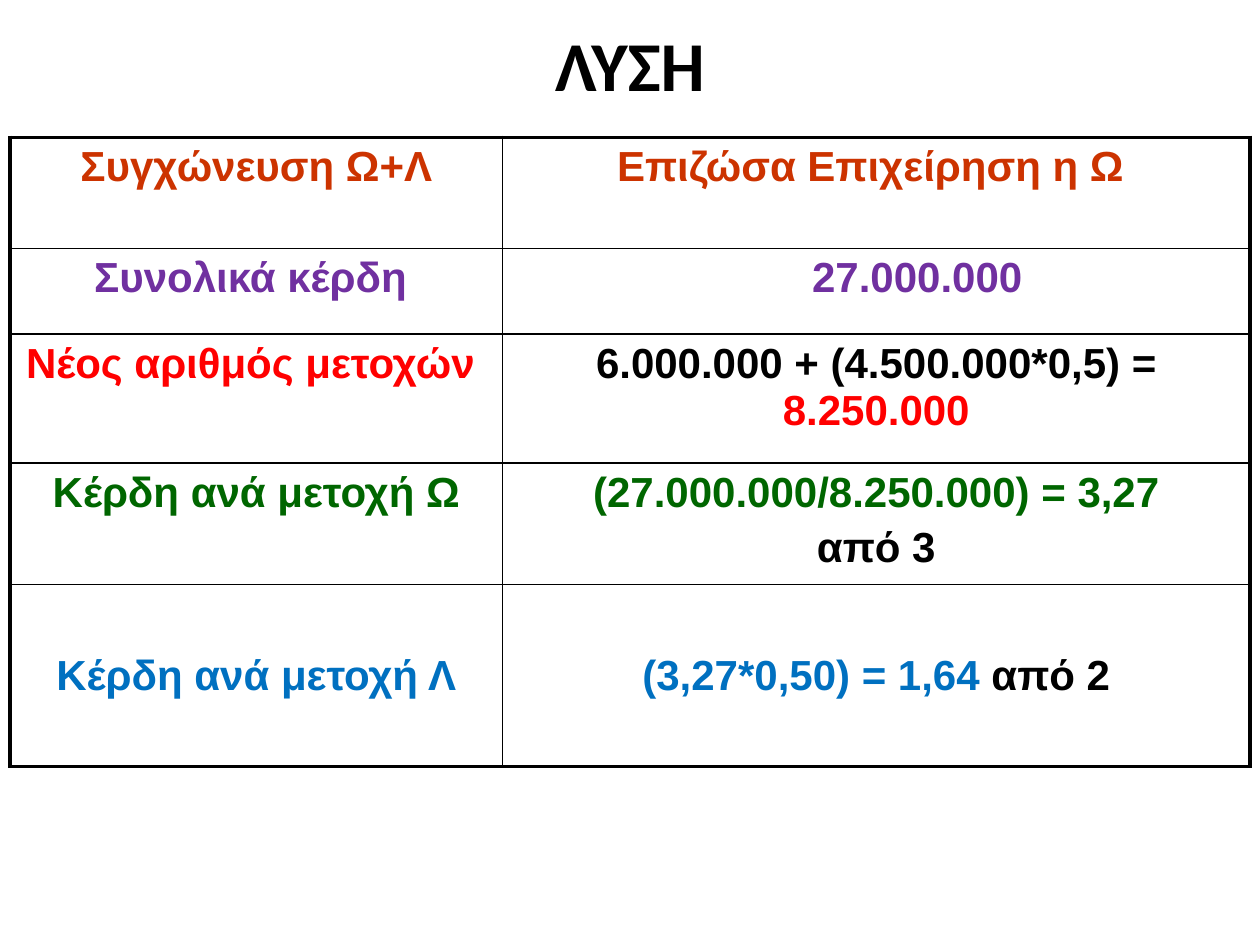
from lxml import etree
from pptx import Presentation
from pptx.dml.color import RGBColor
from pptx.enum.text import MSO_ANCHOR, PP_ALIGN
from pptx.oxml.ns import qn
from pptx.util import Pt

CENTER = PP_ALIGN.CENTER
TOP, MIDDLE = MSO_ANCHOR.TOP, MSO_ANCHOR.MIDDLE
BLACK, RED, RUST = "000000", "FF0000", "CC3300"
PURPLE, GREEN, BLUE = "7030A0", "006600", "0070C0"
THIN, THICK = 1, 2.25


def color(code):
    return RGBColor.from_string(code)


class Deck:
    """Holds the text style and the current slide."""

    def __init__(self, slide, font="Arial", size=24):
        self.slide, self.font, self.size = slide, font, size

    def text(self, para, runs, font=None, size=None):
        para.alignment = CENTER
        for words, code in runs:
            run = para.add_run()
            run.text = words
            run.font.name = font or self.font
            run.font.size = Pt(size or self.size)
            run.font.bold = True
            run.font.color.rgb = color(code)

    def title(self, words, left, top, width, height):
        box = self.slide.shapes.add_textbox(Pt(left), Pt(top), Pt(width), Pt(height))
        frame = box.text_frame
        frame.word_wrap = True
        frame.vertical_anchor = TOP
        para = frame.paragraphs[0]
        para.line_spacing = 1.02
        self.text(para, [(words, BLACK)], "Calibri", 40)

    def border(self, cell, sides):
        props = cell._tc.get_or_add_tcPr()
        for spot, (side, width) in enumerate(sides.items()):
            line = etree.Element(qn(f"a:ln{side}"), w=str(Pt(width)))
            fill = etree.SubElement(line, qn("a:solidFill"))
            etree.SubElement(fill, qn("a:srgbClr"), val=BLACK)
            props.insert(spot, line)

    def cell(self, cell, paras, anchor):
        cell.fill.background()
        cell.vertical_anchor = anchor
        frame = cell.text_frame
        for num, runs in enumerate(paras):
            para = frame.add_paragraph() if num else frame.paragraphs[0]
            if num:
                para.space_before = Pt(0.2 * self.size)
            self.text(para, runs)

    def table(self, left, top, cols, rows, data):
        shape = self.slide.shapes.add_table(
            len(rows), len(cols), Pt(left), Pt(top), Pt(sum(cols)), Pt(sum(rows)))
        table = shape.table
        table.first_row = table.horz_banding = False
        for col, width in zip(table.columns, cols):
            col.width = Pt(width)
        end, edge = len(rows) - 1, len(cols) - 1
        for i, (row, height) in enumerate(zip(data, rows)):
            table.rows[i].height = Pt(height)
            for j, paras in enumerate(row):
                cell = table.cell(i, j)
                self.cell(cell, paras, MIDDLE if i == end else TOP)
                self.border(cell, {
                    "L": THIN if j else THICK,
                    "R": THICK if j == edge else THIN,
                    "T": THIN if i else THICK,
                    "B": THICK if i == end else THIN,
                })
        return table


def main():
    prs = Presentation()
    prs.slide_width, prs.slide_height = Pt(720), Pt(540)
    deck = Deck(prs.slides.add_slide(prs.slide_layouts[6]))
    deck.title("ΛΥΣΗ", 0, 8, 720, 43)
    data = [
        [[[("Συγχώνευση Ω+Λ", RUST)]],
         [[("Επιζώσα Επιχείρηση η Ω ", RUST)]]],
        [[[("Συνολικά κέρδη ", PURPLE)]],
         [[("27.000.000", PURPLE)]]],
        [[[("Νέος αριθμός μετοχών ", RED)]],
         [[("6.000.000 + (4.500.000*0,5) = ", BLACK), ("8.250.000", RED)]]],
        [[[("Κέρδη ανά μετοχή Ω", GREEN)]],
         [[("(27.000.000/8.250.000) = 3,27", GREEN)],
          [(" ", GREEN), ("από 3 ", BLACK)]]],
        [[[("Κέρδη ανά μετοχή Λ", BLUE)]],
         [[("(3,27*0,50) = 1,64 ", BLUE), ("από 2", BLACK)]]],
    ]
    table = deck.table(5.75, 78.5, [281.5, 427], [63.5, 49, 73.5, 67.5, 104], data)
    table.cell(1, 1).margin_left = Pt(54)
    prs.save("out.pptx")


if __name__ == "__main__":
    main()
